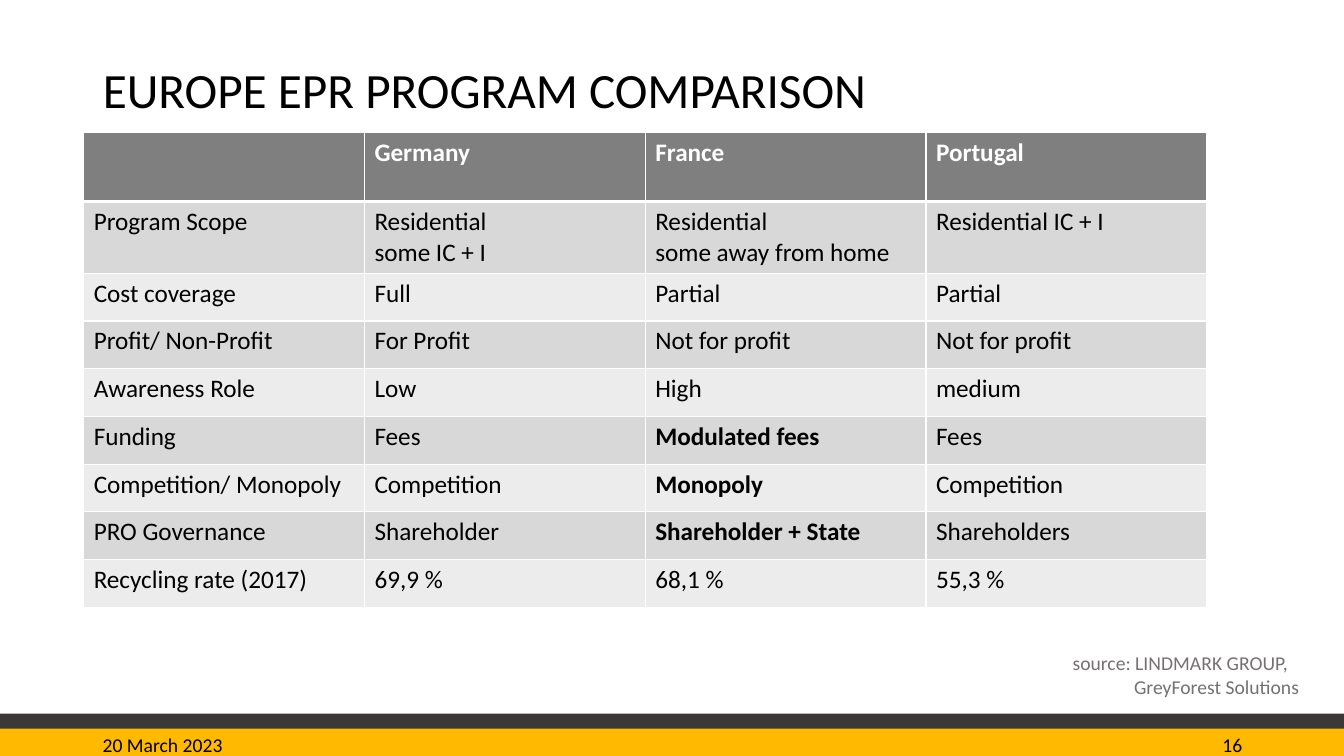
from dataclasses import dataclass

from lxml import etree
from pptx import Presentation
from pptx.dml.color import RGBColor
from pptx.enum.shapes import MSO_SHAPE
from pptx.enum.text import MSO_ANCHOR, MSO_AUTO_SIZE, PP_ALIGN
from pptx.oxml.ns import qn
from pptx.util import Inches, Pt

RECTANGLE = MSO_SHAPE.RECTANGLE
TOP, MIDDLE = MSO_ANCHOR.TOP, MSO_ANCHOR.MIDDLE
LEFT, RIGHT = PP_ALIGN.LEFT, PP_ALIGN.RIGHT
NO_AUTOFIT = MSO_AUTO_SIZE.NONE
TITLE_ONLY = 5
FONT = "Calibri"
COLORS = {
    "black": "000000", "white": "FFFFFF", "yellow": "FFBA00", "charcoal": "3B3838",
    "header": "7F7F7F", "odd": "D8D8D8", "even": "ECECEC", "source": "767171",
}


@dataclass
class Band:
    top: float
    height: float
    color: str


@dataclass
class Label:
    lines: list[str]
    left: float
    top: float
    width: float
    height: float
    color: str = "black"
    align: PP_ALIGN = LEFT
    anchor: MSO_ANCHOR = MIDDLE
    later_indent: float = 0


BANDS = [Band(7.22, 0.28, "yellow"), Band(7.08, 0.15, "charcoal")]
LABELS = [
    Label(["20 March 2023"], 0.92, 7.19, 3, 0.4),
    Label(["16"], 9.42, 7.19, 3, 0.4, align=RIGHT),
    Label(["source: LINDMARK GROUP,", "GreyForest Solutions"], 10.54, 6.41, 2.56, 0.57,
          color="source", anchor=TOP, later_indent=0.61),
]

ROWS = [
    ["", "Germany", "France", "Portugal"],
    ["Program Scope", "Residential\nsome IC + I", "Residential\nsome away from home",
     "Residential IC + I"],
    ["Cost coverage", "Full", "Partial", "Partial"],
    ["Profit/ Non-Profit", "For Profit", "Not for profit", "Not for profit"],
    ["Awareness Role", "Low", "High", "medium"],
    ["Funding", "Fees", "Modulated fees", "Fees"],
    ["Competition/ Monopoly", "Competition", "Monopoly", "Competition"],
    ["PRO Governance", "Shareholder", "Shareholder + State", "Shareholders"],
    ["Recycling rate (2017)", "69,9 %", "68,1 %", "55,3 %"],
]
BOLD_CELLS = {"Modulated fees", "Monopoly", "Shareholder + State"}
COLUMN_WIDTH = 2.785
TALL_ROW, ROW_HEIGHT = 0.69, 0.474


def rgb(name: str) -> RGBColor:
    return RGBColor.from_string(COLORS[name])


def style(paragraph, size: float, color: str, bold: bool = False) -> None:
    font = paragraph.font
    font.name, font.size, font.bold = FONT, Pt(size), bold
    font.color.rgb = rgb(color)


def add_band(slide, band: Band, width: int) -> None:
    shape = slide.shapes.add_shape(RECTANGLE, 0, Inches(band.top), width, Inches(band.height))
    shape.shadow.inherit = False
    shape.fill.solid()
    shape.fill.fore_color.rgb = rgb(band.color)
    shape.line.fill.background()


def add_title(slide, text: str) -> None:
    title = slide.shapes.title
    title.left, title.top = Inches(0.92), Inches(0.4)
    title.width, title.height = Inches(11.5), Inches(0.96)
    frame = title.text_frame
    frame.text = text
    frame.auto_size = NO_AUTOFIT
    frame.vertical_anchor = MIDDLE
    paragraph = frame.paragraphs[0]
    paragraph.alignment = LEFT
    paragraph.line_spacing = 0.9
    style(paragraph, 44, "black")
    # Small capitals
    paragraph.runs[0].font._element.set("cap", "small")


def add_label(slide, label: Label) -> None:
    box = slide.shapes.add_textbox(Inches(label.left), Inches(label.top),
                                   Inches(label.width), Inches(label.height))
    frame = box.text_frame
    frame.word_wrap = True
    frame.vertical_anchor = label.anchor
    frame.text = "\n".join(label.lines)
    for index, paragraph in enumerate(frame.paragraphs):
        paragraph.alignment = label.align
        if index and label.later_indent:
            paragraph._p.get_or_add_pPr().set("marL", str(Inches(label.later_indent)))
        style(paragraph, 14, label.color)


def set_borders(cell, top: float, bottom: float) -> None:
    properties = cell._tc.get_or_add_tcPr()
    widths = {"a:lnL": 1, "a:lnR": 1, "a:lnT": top, "a:lnB": bottom}
    for position, (tag, width) in enumerate(widths.items()):
        line = etree.Element(qn(tag), w=str(Pt(width)))
        fill = etree.SubElement(line, qn("a:solidFill"))
        etree.SubElement(fill, qn("a:srgbClr"), val=COLORS["white"])
        properties.insert(position, line)


def add_comparison_table(slide) -> None:
    columns = len(ROWS[0])
    heights = [TALL_ROW] * 2 + [ROW_HEIGHT] * (len(ROWS) - 2)
    table = slide.shapes.add_table(len(ROWS), columns, Inches(0.83), Inches(1.31),
                                   Inches(COLUMN_WIDTH * columns), Inches(sum(heights))).table
    for column in table.columns:
        column.width = Inches(COLUMN_WIDTH)
    for row_index, texts in enumerate(ROWS):
        table.rows[row_index].height = Inches(heights[row_index])
        is_header = row_index == 0
        fill = "header" if is_header else "odd" if row_index % 2 else "even"
        for column_index, text in enumerate(texts):
            cell = table.cell(row_index, column_index)
            cell.text = text
            cell.fill.solid()
            cell.fill.fore_color.rgb = rgb(fill)
            set_borders(cell, top=3 if row_index == 1 else 1, bottom=3 if is_header else 1)
            for paragraph in cell.text_frame.paragraphs:
                style(paragraph, 18, "white" if is_header else "black",
                      bold=is_header or text in BOLD_CELLS)


def main() -> None:
    presentation = Presentation()
    presentation.slide_width, presentation.slide_height = Inches(13.33), Inches(7.5)
    slide = presentation.slides.add_slide(presentation.slide_layouts[TITLE_ONLY])

    # Footer bands
    for band in BANDS:
        add_band(slide, band, presentation.slide_width)

    # Title and table
    add_title(slide, "europe epr program comparison")
    add_comparison_table(slide)

    # Date, slide number and source
    for label in LABELS:
        add_label(slide, label)

    presentation.save("out.pptx")


if __name__ == "__main__":
    main()
